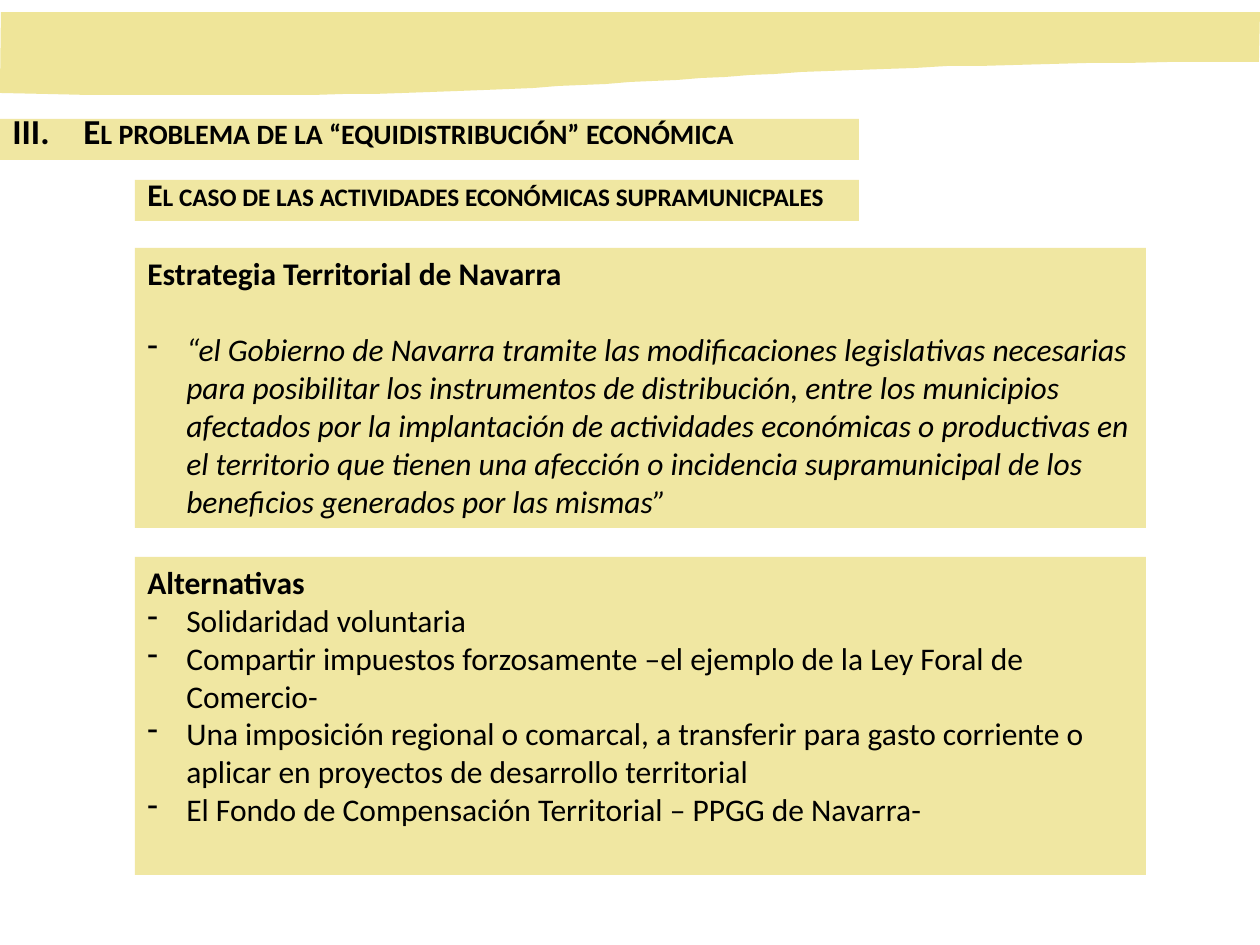
import pptx
import pptx.util
import pptx.dml.color
import pptx.enum.shapes
import pptx.enum.text
import lxml.etree
from pptx.oxml.ns import qn

PX = 914400 // 126
BAND, PANEL, INK = "EFE599", "F0E7A2", "000000"
DASH = ("a:buChar", {"char": "-"})
ROMAN_THREE = ("a:buAutoNum", {"type": "romanUcPeriod", "startAt": "3"})


def color(hex_string):
    return pptx.dml.color.RGBColor.from_string(hex_string)


def add_text(frame, text, size=18, bold=False, italic=False, small_caps=False,
             bullet=None, indent=39, line_height=None, space_before=0):
    first = not frame.paragraphs[0].runs
    paragraph = frame.paragraphs[0] if first else frame.add_paragraph()
    paragraph.alignment = pptx.enum.text.PP_ALIGN.LEFT
    if line_height:
        paragraph.line_spacing = pptx.util.Pt(line_height)
    if space_before:
        paragraph.space_before = pptx.util.Pt(space_before)
    if bullet:
        tag, attributes = bullet
        properties = paragraph._p.get_or_add_pPr()
        properties.set("marL", str(indent * PX))
        properties.set("indent", str(-indent * PX))
        lxml.etree.SubElement(properties, qn(tag), attributes)
    run = paragraph.add_run()
    run.text = text
    run.font.name = "Calibri"
    run.font.size = pptx.util.Pt(size)
    run.font.bold = bold
    run.font.italic = italic
    run.font.color.rgb = color(INK)
    if small_caps:
        run.font._element.set("cap", "small")


presentation = pptx.Presentation()
presentation.slide_width = 1260 * PX
presentation.slide_height = 945 * PX
slide = presentation.slides.add_slide(presentation.slide_layouts[6])

# Header band, its lower edge sampled from a cubic curve
controls = [(1259, 62), (629, 62), (630, 106), (0, 93)]
steps = 40
edge = []
for step in range(steps + 1):
    t = step / steps
    weights = [(1 - t) ** 3, 3 * t * (1 - t) ** 2, 3 * t ** 2 * (1 - t), t ** 3]
    edge.append(tuple(sum(weight * point[axis] for weight, point in zip(weights, controls))
                      for axis in (0, 1)))
builder = slide.shapes.build_freeform(1, 12, scale=PX)
builder.add_line_segments([(1260, 12)] + edge, close=True)
band = builder.convert_to_shape()
band.shadow.inherit = False
band.fill.solid()
band.fill.fore_color.rgb = color(BAND)
band.line.fill.background()

# Text panels
panels = [
    (0, 119, 859, 41, [
        ("El problema de la “equidistribución” económica",
         dict(size=20, bold=True, small_caps=True, line_height=15,
              bullet=ROMAN_THREE, indent=71))]),
    (135, 180, 724, 41, [
        ("El caso de las actividades económicas supramunicpales",
         dict(bold=True, small_caps=True, line_height=15))]),
    (135, 248, 1011, 280, [
        ("Estrategia Territorial de Navarra", dict(bold=True)),
        ("“el Gobierno de Navarra tramite las modificaciones legislativas necesarias "
         "para posibilitar los instrumentos de distribución, entre los municipios "
         "afectados por la implantación de actividades económicas o productivas en el "
         "territorio que tienen una afección o incidencia supramunicipal de los "
         "beneficios generados por las mismas”",
         dict(italic=True, bullet=DASH, space_before=22))]),
    (135, 557, 1011, 318, [
        ("Alternativas", dict(bold=True)),
        ("Solidaridad voluntaria", dict(bullet=DASH)),
        ("Compartir impuestos forzosamente –el ejemplo de la Ley Foral de Comercio-",
         dict(bullet=DASH)),
        ("Una imposición regional o comarcal, a transferir para gasto corriente o "
         "aplicar en proyectos de desarrollo territorial", dict(bullet=DASH)),
        ("El Fondo de Compensación Territorial – PPGG de Navarra-",
         dict(bullet=DASH))]),
]
for left, top, width, height, paragraphs in panels:
    panel = slide.shapes.add_shape(pptx.enum.shapes.MSO_SHAPE.RECTANGLE,
                                   left * PX, top * PX, width * PX, height * PX)
    panel.shadow.inherit = False
    panel.fill.solid()
    panel.fill.fore_color.rgb = color(PANEL)
    panel.line.fill.background()
    frame = panel.text_frame
    frame.word_wrap = True
    frame.vertical_anchor = pptx.enum.text.MSO_ANCHOR.TOP
    for text, style in paragraphs:
        add_text(frame, text, **style)

presentation.save("out.pptx")
